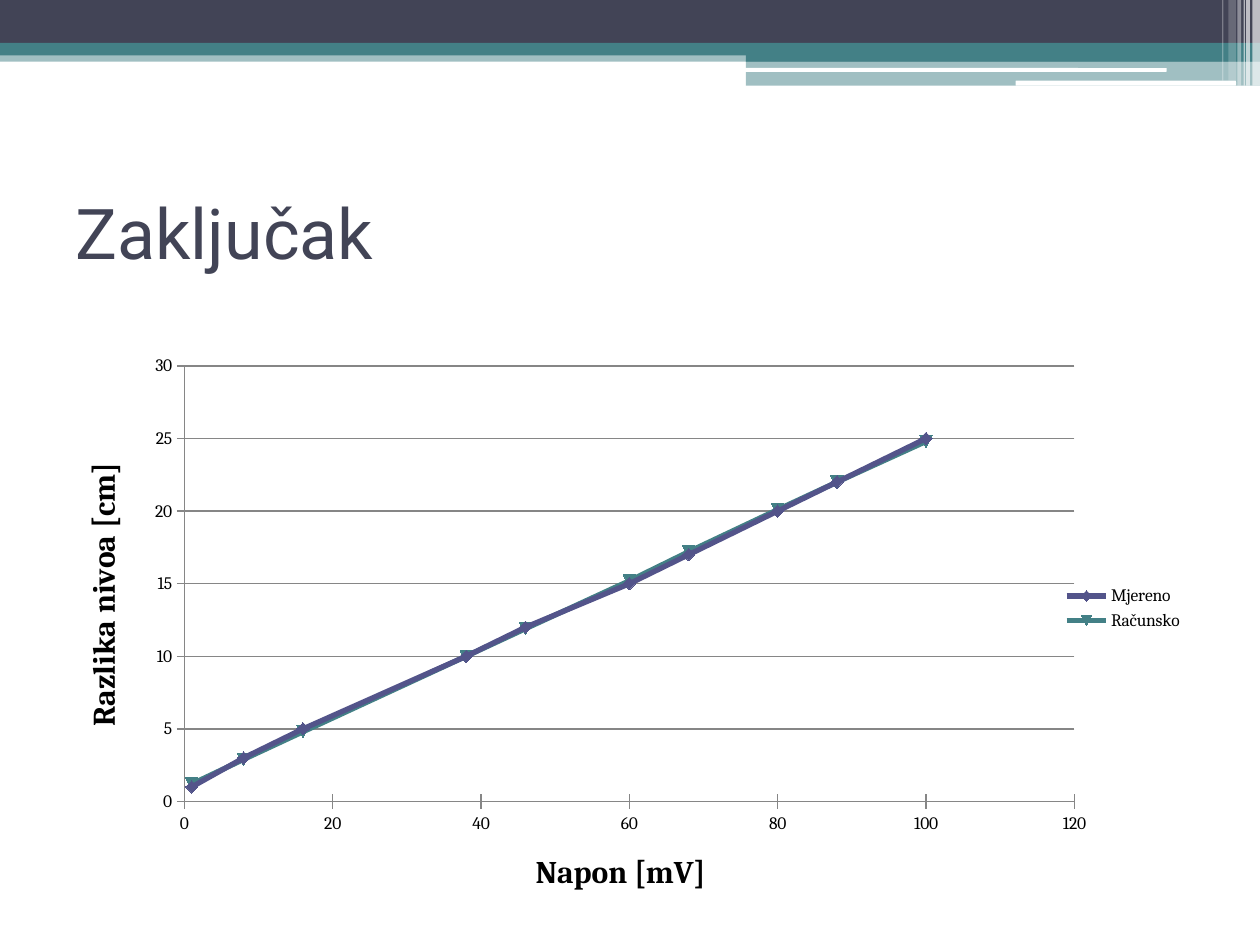
from dataclasses import dataclass

from lxml.etree import SubElement
from pptx import Presentation
from pptx.chart.data import XyChartData
from pptx.dml.color import RGBColor
from pptx.enum.chart import (XL_CHART_TYPE as Kind, XL_LEGEND_POSITION as Side,
                             XL_MARKER_STYLE as Mark, XL_TICK_MARK as Tick)
from pptx.enum.shapes import MSO_SHAPE as Form
from pptx.enum.text import MSO_ANCHOR as Anchor, PP_ALIGN as Align
from pptx.oxml import parse_xml
from pptx.oxml.ns import nsdecls, qn
from pptx.util import Inches, Pt


@dataclass(frozen=True)
class Theme:
    dark: str = "424456"
    teal: str = "438086"
    violet: str = "53548A"
    white: str = "FFFFFF"
    black: str = "000000"
    grid: str = "868686"
    head: str = "Roboto"
    body: str = "Cambria"
    title: int = 40
    axis: int = 18
    label: int = 10


THEME = Theme()
VOLTS = [1, 8, 16, 38, 46, 60, 68, 80, 88, 100]
LEVELS = {
    "Mjereno": (THEME.violet, [1, 3, 5, 10, 12, 15, 17, 20, 22, 25]),
    "Računsko": (THEME.teal, [1.2, 2.9, 4.8, 10, 11.9, 15.2, 17.2, 20.1, 22, 24.8]),
}


def tint(name):
    return RGBColor.from_string(name)


def style(font, size, color=THEME.black, face=THEME.body, bold=False):
    font.size, font.name, font.bold = Pt(size), face, bold
    font.color.rgb = tint(color)


def write(frame, text, align=None, **form):
    para = frame.paragraphs[0]
    para.alignment = align
    run = para.add_run()
    run.text = text
    style(run.font, **form)


def bar(slide, box, color, alpha=100, form=Form.RECTANGLE):
    shape = slide.shapes.add_shape(form, *map(Inches, box))
    shape.shadow.inherit = False
    shape.fill.solid()
    shape.fill.fore_color.rgb = tint(color)
    shape.line.fill.background()
    if alpha < 100:
        node = shape.fill._xPr.find(".//" + qn("a:srgbClr"))
        SubElement(node, qn("a:alpha"), val=str(alpha * 1000))


def banner(slide, x, y, wide):
    """Draw the layered bands, the white slots and the stripes at the right end."""
    tab = x + 5.92
    rest = wide - 5.92
    bar(slide, (x, y + 0.4, wide, 0.09), THEME.teal, 50)
    bar(slide, (x, y, wide, 0.34), THEME.dark)
    bar(slide, (x, y + 0.34, wide, 0.1), THEME.teal)
    bar(slide, (tab, y + 0.39, rest, 0.1), THEME.teal)
    bar(slide, (tab, y + 0.48, rest, 0.2), THEME.teal, 50)
    for left, top, width, high in ((5.91, 0.54, 3.35, 0.03), (8.06, 0.64, 1.75, 0.04)):
        bar(slide, (x + left, y + top, width, high), THEME.white,
            form=Form.ROUNDED_RECTANGLE)
    stripes = ((0.06, 0.06, 0.68, 65), (0.11, 0.03, 0.68, 65), (0.13, 0.01, 0.68, 60),
               (0.18, 0.03, 0.68, 40), (0.25, 0.06, 0.64, 20), (0.3, 0.01, 0.64, 30))
    for back, width, high, alpha in stripes:
        bar(slide, (x + wide - back, y, width, high), THEME.white, alpha)


def heading(slide, text, box):
    title = slide.shapes.title
    title.left, title.top, title.width, title.height = map(Inches, box)
    title.text_frame.vertical_anchor = Anchor.MIDDLE
    write(title.text_frame, text, Align.LEFT, size=THEME.title,
          color=THEME.dark, face=THEME.head)


def place(part, before, target="", **spot):
    """Give a chart part a fixed layout, as shares of the chart box."""
    old = part.find(qn("c:layout"))
    if old is not None:
        part.remove(old)
    inner = f'<c:layoutTarget val="{target}"/>' if target else ""
    modes = "".join(f'<c:{k}Mode val="edge"/>' for k in "xy")
    sizes = "".join(f'<c:{k} val="{v}"/>' for k, v in spot.items())
    node = parse_xml(f'<c:layout {nsdecls("c")}><c:manualLayout>{inner}{modes}{sizes}'
                     "</c:manualLayout></c:layout>")
    if before is None:
        part.insert(0, node)
    else:
        part.find(qn(before)).addnext(node)


def scale(axis, text, top, step, grid):
    axis.minimum_scale, axis.maximum_scale, axis.major_unit = 0, top, step
    axis.major_tick_mark, axis.minor_tick_mark = Tick.CROSS, Tick.NONE
    axis.format.line.color.rgb = tint(THEME.grid)
    axis.has_major_gridlines = grid
    if grid:
        axis.major_gridlines.format.line.color.rgb = tint(THEME.grid)
    axis.tick_labels.number_format = "General"
    axis.tick_labels.number_format_is_linked = False
    style(axis.tick_labels.font, THEME.label)
    write(axis.axis_title.text_frame, text, size=THEME.axis, bold=True)


def graph(slide, box):
    data = XyChartData()
    for name, (_, levels) in LEVELS.items():
        line = data.add_series(name)
        for volt, level in zip(VOLTS, levels):
            line.add_data_point(volt, level)
    chart = slide.shapes.add_chart(Kind.XY_SCATTER_SMOOTH, *map(Inches, box), data).chart
    style(chart.font, THEME.label)
    chart.has_title = False
    chart.plots[0].vary_by_categories = False
    for line, (color, _) in zip(chart.plots[0].series, LEVELS.values()):
        line.smooth = True
        line.format.line.width = Pt(3)
        line.format.line.color.rgb = tint(color)
        line.marker.style, line.marker.size = Mark.AUTOMATIC, 7
        line.marker.format.fill.solid()
        line.marker.format.fill.fore_color.rgb = tint(color)
        line.marker.format.line.color.rgb = tint(color)
    scale(chart.category_axis, "Napon [mV]", 120, 20, False)
    scale(chart.value_axis, "Razlika nivoa [cm]", 30, 5, True)
    chart.has_legend = True
    chart.legend.position = Side.RIGHT
    chart.legend.include_in_layout = False
    style(chart.legend.font, THEME.label)
    area = chart.plots._plotArea
    place(area, None, "inner", x=0.107, y=0.094, w=0.785, h=0.731)
    place(chart.legend._element, "c:legendPos", x=0.88, y=0.455)


def main():
    deck = Presentation()
    deck.slide_width, deck.slide_height = Inches(10), Inches(7.5)
    slide = deck.slides.add_slide(deck.slide_layouts[5])
    banner(slide, 0, 0, 10)
    heading(slide, "Zaključak", (0.5, 1.25, 9, 1.17))
    graph(slide, (0.5, 2.46, 9, 4.73))
    deck.save("out.pptx")


if __name__ == "__main__":
    main()
